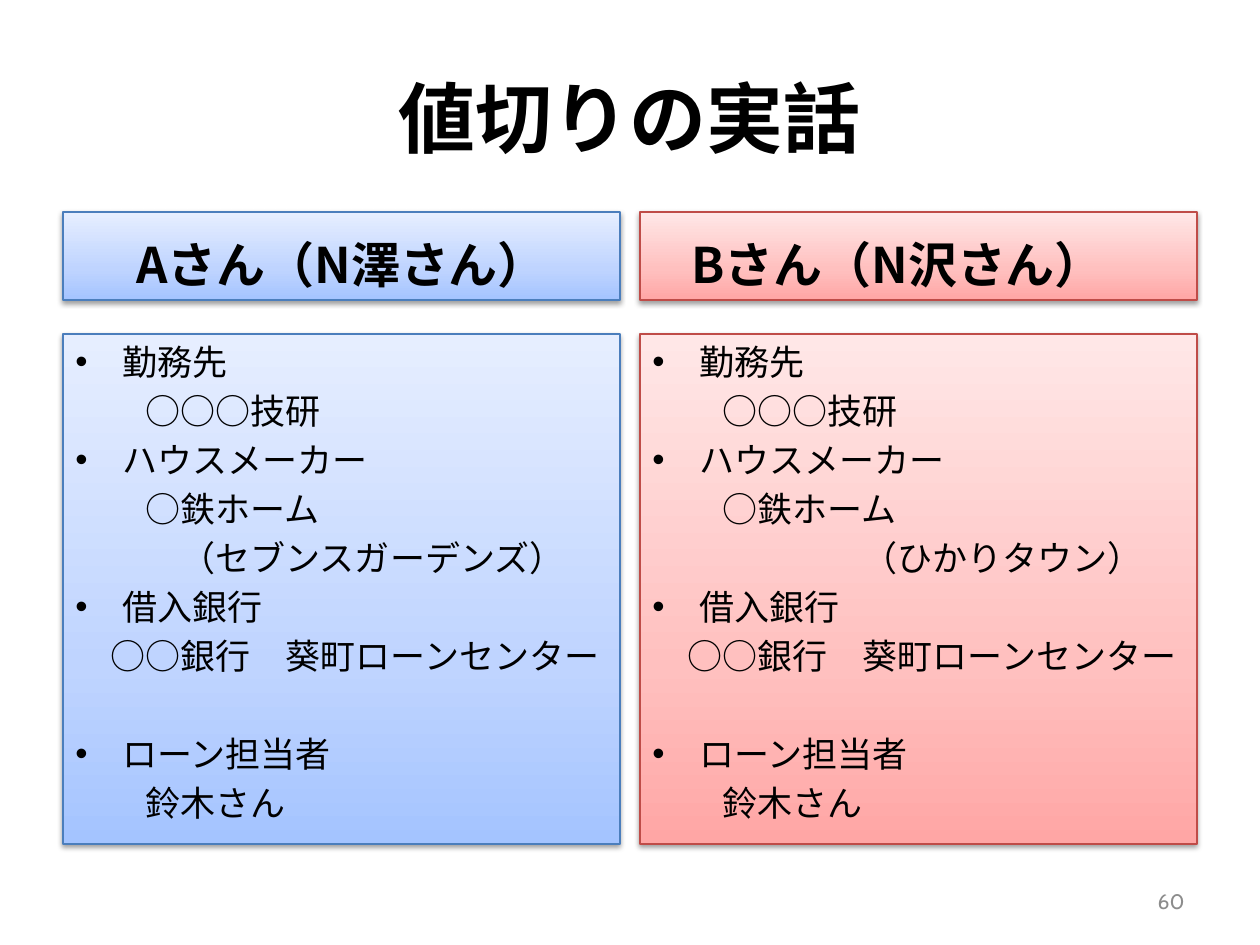
from copy import deepcopy
from pptx import Presentation
from pptx.dml.color import RGBColor as Rgb
from pptx.enum.shapes import MSO_SHAPE as Shape
from pptx.enum.text import MSO_ANCHOR as Anchor, PP_ALIGN as Align
from pptx.oxml import parse_xml
from pptx.oxml.ns import nsdecls
from pptx.util import Pt

SCALE = 914400 / 126
FONT = "Noto Sans CJK JP"
HUES = {
    "ink": "000000",
    "gray": "8C8C8C",
    "blue": {"line": "4B7EBC", "stops": ("A4C4FF", "BFD4FF", "E6EEFF")},
    "red": {"line": "BF4C48", "stops": ("FFA6A5", "FFC0BF", "FFE7E7")},
}
STOPS = (0, 0.35, 1)
EM = 35  # width of one full-width letter in the body text
HANG = 47


def px(n):
    return round(n * SCALE)


def style(para, size, bold=False, hue="ink", face=FONT):
    for run in para.runs:
        font = run.font
        font.size, font.bold, font.name = Pt(size), bold, face
        font.color.rgb = Rgb.from_string(HUES[hue])
        run._r.get_or_add_rPr().find("{*}latin").addnext(
            parse_xml(f'<a:ea {nsdecls("a")} typeface="{face}"/>'))


def indent(para, left, bullet=False):
    props = para._p.get_or_add_pPr()
    props.set("marL", str(px(left)))
    props.set("indent", str(px(-left if bullet else 0)))
    if bullet:
        props.append(parse_xml(f'<a:buFont {nsdecls("a")} typeface="Arial"/>'))
        props.append(parse_xml(f'<a:buChar {nsdecls("a")} char="•"/>'))


def label(slide, box, text, size, align, **look):
    frame = slide.shapes.add_textbox(*map(px, box)).text_frame
    frame.word_wrap = True
    frame.vertical_anchor = Anchor.MIDDLE
    frame.text = text
    para = frame.paragraphs[0]
    para.alignment = align
    style(para, size, **look)


def panel(slide, box, hue, anchor):
    """Add a gradient rectangle with a soft shadow; return its text frame."""
    shape = slide.shapes.add_shape(Shape.RECTANGLE, *map(px, box))
    fill = shape.fill
    fill.gradient()
    fill.gradient_angle = 90
    first = fill.gradient_stops[0]._gs
    first.addnext(deepcopy(first))
    for stop, pos, tone in zip(fill.gradient_stops, STOPS, HUES[hue]["stops"]):
        stop.position = pos
        stop.color.rgb = Rgb.from_string(tone)
    shape.line.color.rgb = Rgb.from_string(HUES[hue]["line"])
    shape.line.width = Pt(0.75)
    shape.shadow.inherit = False
    shape._element.spPr.find("{*}effectLst").append(parse_xml(
        f'<a:outerShdw {nsdecls("a")} blurRad="{Pt(3.1)}" dist="{Pt(1.6)}" '
        'dir="5400000" rotWithShape="0"><a:srgbClr val="000000">'
        '<a:alpha val="38000"/></a:srgbClr></a:outerShdw>'))
    frame = shape.text_frame
    frame.word_wrap = True
    frame.vertical_anchor = anchor
    return frame


def column(slide, box, hue, name, inset, items):
    left, top, width, height = box

    # Heading
    frame = panel(slide, (left, top, width, 88), hue, Anchor.BOTTOM)
    frame.text = name
    para = frame.paragraphs[0]
    para.alignment = Align.LEFT
    para.space_before = Pt(5.6)
    indent(para, inset)
    style(para, 28, bold=True)

    # Details: bulleted where no depth is given
    frame = panel(slide, (left, top + 122, width, height - 122), hue, Anchor.TOP)
    frame.text = "\n".join(text for text, depth, gap in items)
    for para, (text, depth, gap) in zip(frame.paragraphs, items):
        para.alignment = Align.LEFT
        para.space_before = Pt(gap)
        indent(para, depth * EM or HANG, bullet=not depth)
        style(para, 20)


def details(town, depth):
    """Rows of text, depth in letters and space before in points."""
    return [
        ("勤務先", 0, 0),
        ("○○○技研", 2, 4),
        ("ハウスメーカー", 0, 4),
        ("○鉄ホーム", 2, 4),
        (f"（{town}）", depth, 4),
        ("借入銀行", 0, 4),
        ("○○銀行　葵町ローンセンター", 1, 4),
        ("ローン担当者", 0, 32),
        ("鈴木さん", 2, 4),
    ]


def main():
    deck = Presentation()
    deck.slide_width, deck.slide_height = px(1260), px(945)
    slide = deck.slides.add_slide(deck.slide_layouts[6])

    # Title
    label(slide, (63, 38, 1134, 157), "値切りの実話", 44, Align.CENTER, bold=True)

    # Two people side by side
    people = [
        ("blue", "Aさん（N澤さん）", 61, details("セブンスガーデンズ", 3)),
        ("red", "Bさん（N沢さん）", 39, details("ひかりタウン", 6)),
    ]
    for col, person in enumerate(people):
        column(slide, (63 + col * 577, 212, 557, 632), *person)

    # Page number
    label(slide, (903, 876, 294, 50), "60", 12, Align.RIGHT, hue="gray", face="Cabin")

    deck.save("out.pptx")


if __name__ == "__main__":
    main()
